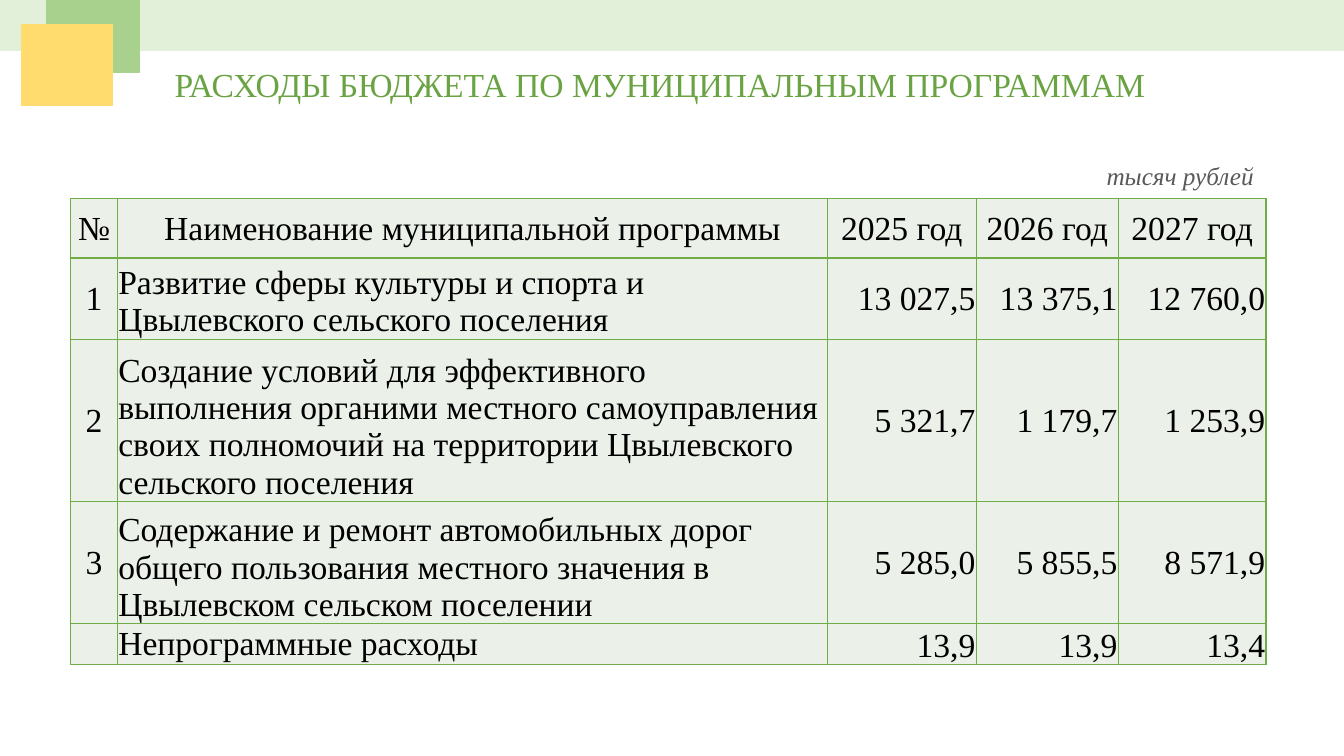
from dataclasses import dataclass
from typing import Any

from lxml.etree import SubElement
from pptx import Presentation
from pptx.dml.color import RGBColor
from pptx.enum.shapes import MSO_SHAPE
from pptx.enum.text import MSO_ANCHOR as Anchor, MSO_AUTO_SIZE as Fit, PP_ALIGN as Align
from pptx.oxml.ns import qn
from pptx.util import Pt

FACE = "Times New Roman"
GREEN = "70AD47"
CELL = "EBF1E9"


@dataclass
class Box:
    left: float
    top: float
    width: float
    height: float

    def frame(self) -> list[Pt]:
        return [Pt(v) for v in (self.left, self.top, self.width, self.height)]


@dataclass
class Block:
    box: Box
    color: str


@dataclass
class Row:
    height: float
    texts: tuple[str, ...]
    aligns: tuple[Any, ...]
    anchors: tuple[Any, ...]


C, L, R = Align.CENTER, Align.LEFT, Align.RIGHT
M, B = Anchor.MIDDLE, Anchor.BOTTOM
BODY = (C, L, R, R, R)
MIXED = (M, B, M, M, M)

BLOCKS = [
    Block(Box(0, 0, 960, 36), "E2F0D9"),
    Block(Box(33.5, 0, 66, 51.5), "A9D18E"),
    Block(Box(15.5, 17.5, 65, 58), "FFDC6D"),
]
COLS = (33.2, 507.2, 106.4, 101.4, 105.6)
ROWS = [
    Row(42.5, ("№", "Наименование муниципальной программы",
               "2025 год", "2026 год", "2027 год"), (C,) * 5, (M,) * 5),
    Row(58, ("1", "Развитие сферы культуры и спорта и Цвылевского сельского поселения",
             "13 027,5", "13 375,1", "12 760,0"), BODY, MIXED),
    Row(115.8, ("2", "Создание условий для эффективного выполнения органими местного "
                "самоуправления своих полномочий на территории Цвылевского "
                "сельского поселения", "5 321,7", "1 179,7", "1 253,9"), BODY, MIXED),
    Row(87.2, ("3", "Содержание и ремонт автомобильных дорог общего пользования "
               "местного значения в Цвылевском сельском поселении",
               "5 285,0", "5 855,5", "8 571,9"), BODY, MIXED),
    Row(29.2, ("", "Непрограммные расходы", "13,9", "13,9", "13,4"),
        BODY, (M, M, B, B, B)),
]


def tint(value: str) -> RGBColor:
    return RGBColor.from_string(value)


def apply(item: Any, form: dict[str, Any]) -> None:
    for name, value in form.items():
        setattr(item, name, value)


def write(frame: Any, text: str, size: float, color: str,
          align: Any = L, italic: bool = False) -> None:
    para = frame.paragraphs[0]
    para.alignment = align
    if text:
        run = para.add_run()
        run.text = text
        apply(run.font, {"name": FACE, "size": Pt(size), "italic": italic})
        run.font.color.rgb = tint(color)


def label(shape: Any, box: Box, text: str, size: float, color: str,
          italic: bool = False) -> None:
    apply(shape, dict(zip(("left", "top", "width", "height"), box.frame())))
    apply(shape.text_frame, {"word_wrap": False, "auto_size": Fit.NONE,
                             "vertical_anchor": Anchor.TOP})
    write(shape.text_frame, text, size, color, italic=italic)


def draw_block(slide: Any, block: Block) -> None:
    shape = slide.shapes.add_shape(MSO_SHAPE.RECTANGLE, *block.box.frame())
    shape.shadow.inherit = False
    shape.fill.solid()
    shape.fill.fore_color.rgb = tint(block.color)
    shape.line.color.rgb = tint(block.color)
    shape.line.width = Pt(1)


def border(cell: Any) -> None:
    props = cell._tc.get_or_add_tcPr()
    for side in ("a:lnL", "a:lnR", "a:lnT", "a:lnB"):
        line = SubElement(props, qn(side), w=str(Pt(1)))
        fill = SubElement(line, qn("a:solidFill"))
        SubElement(fill, qn("a:srgbClr"), val=GREEN)


def draw_table(slide: Any, left: float, top: float) -> None:
    box = Box(left, top, sum(COLS), sum(row.height for row in ROWS))
    table = slide.shapes.add_table(len(ROWS), len(COLS), *box.frame()).table
    apply(table, {"first_row": False, "horz_banding": False})
    for col, width in zip(table.columns, COLS):
        col.width = Pt(width)
    for line, row in zip(table.rows, ROWS):
        line.height = Pt(row.height)
        for cell, text, align, anchor in zip(line.cells, row.texts, row.aligns, row.anchors):
            border(cell)
            cell.fill.solid()
            cell.fill.fore_color.rgb = tint(CELL)
            apply(cell, {"margin_left": Pt(0.7), "margin_right": Pt(0.7),
                         "margin_top": Pt(0.7), "margin_bottom": 0,
                         "vertical_anchor": anchor})
            write(cell.text_frame, text, 24, "000000", align)


def main() -> None:
    deck = Presentation()
    apply(deck, {"slide_width": Pt(960), "slide_height": Pt(540)})
    slide = deck.slides.add_slide(deck.slide_layouts[5])
    label(slide.shapes.title, Box(117.5, 42, 715, 36),
          "РАСХОДЫ БЮДЖЕТА ПО МУНИЦИПАЛЬНЫМ ПРОГРАММАМ", 24, "6AA343")
    for block in BLOCKS:
        draw_block(slide, block)
    unit = Box(783.3, 111, 121, 29)
    label(slide.shapes.add_textbox(*unit.frame()), unit,
          "тысяч рублей", 18, "595959", italic=True)
    draw_table(slide, 50.6, 141.8)
    deck.save("out.pptx")


if __name__ == "__main__":
    main()
